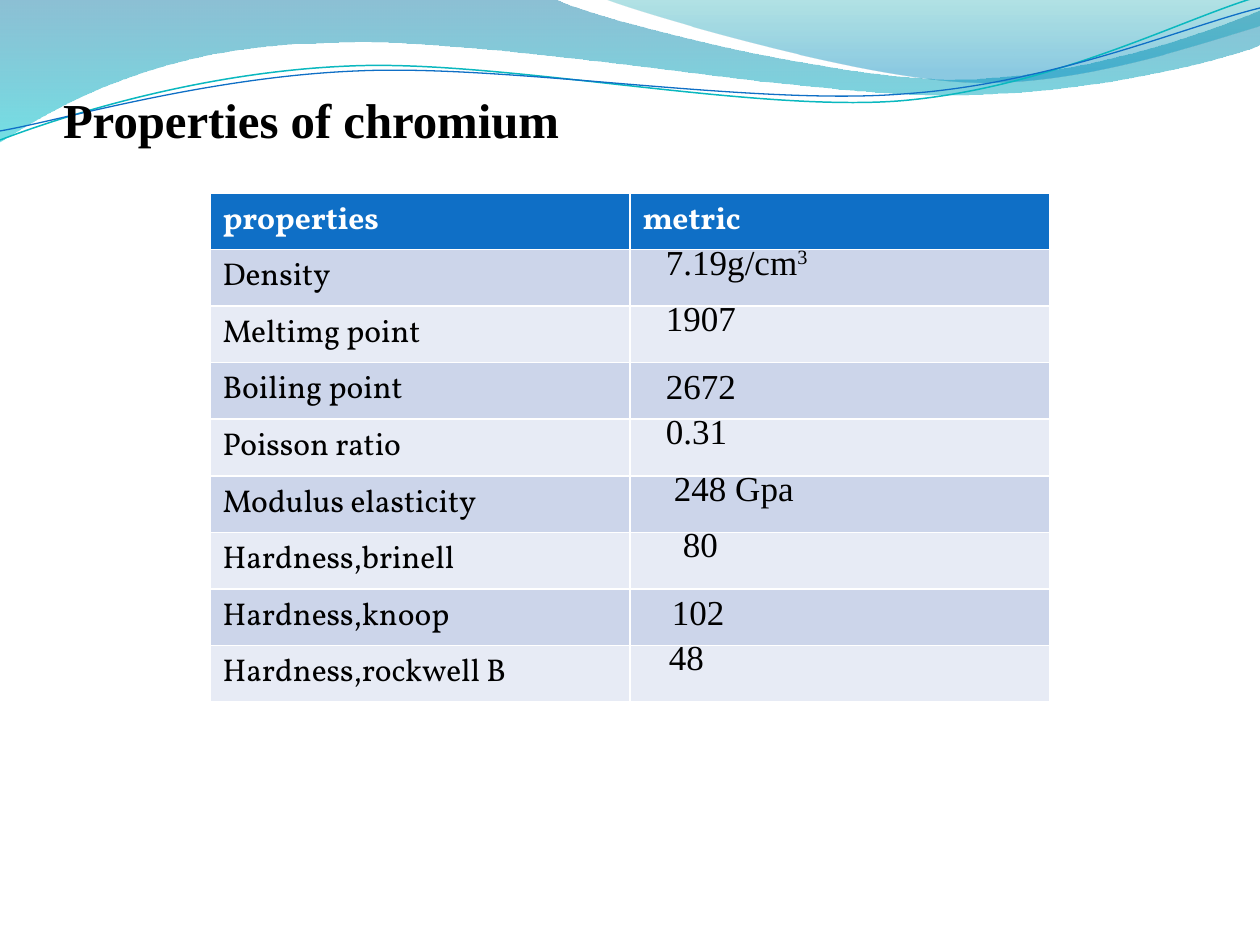
from lxml import etree
from pptx import Presentation
from pptx import util as u
from pptx.dml.color import RGBColor
from pptx.enum import text
from pptx.oxml.ns import qn

PX = 7257  # EMU in one px, 126 px to the inch
SERIF, BODY = "Times New Roman", "Vollkorn"


def rgb(color):
    return RGBColor.from_string(color)


def write(p, words, size=18, font=BODY, color="000000", bold=False, raised=False):
    r = p.add_run()
    r.text = words
    r.font.size, r.font.name, r.font.bold = u.Pt(size), font, bold
    r.font.color.rgb = rgb(color)
    if raised:
        r._r.get_or_add_rPr().set("baseline", "30000")


prs = Presentation()
prs.slide_width, prs.slide_height = u.Inches(10), u.Inches(7.5)
s = prs.slides.add_slide(prs.slide_layouts[5])

# Waves: two numbers are the end of a line, six are a Bezier curve
waves = [
    ([(-1, -1), (554, -1), (600, 21, 837, 79, 955, 79), (1074, 79, 1207, 33, 1260, 11),
      (1261, 45), (1239, 55, 1096, 96, 940, 95), (784, 94, 481, 35, 324, 43),
      (163, 45, 58, 105, -1, 142)],
     [(0, "0074A1", 45), (1, "00C6CF", 55)], None),
    ([(604, -1), (641, 14, 859, 78, 969, 82), (1079, 87, 1211, 40, 1260, 26), (1260, 0)],
     [(0, "00A1A9", 30), (0.8, "008BBF", 45)], None),
    ([(0, 140), (60, 117, 199, 72, 349, 66), (498, 59, 747, 112, 898, 101),
      (1049, 89, 1182, 19, 1257, -3)], None, ("0AB8BF", 0.85)),
    ([(0, 131), (59, 121, 207, 77, 357, 71), (508, 64, 752, 106, 903, 94),
      (1053, 84, 1186, 26, 1260, 8)], None, ("0F6FC6", 0.75)),
]
for segments, stops, line in waves:
    points = [seg[i:i + 2] for seg in segments for i in range(0, len(seg), 2)]
    fb = s.shapes.build_freeform(*points[0], scale=PX)
    fb.add_line_segments(points[1:], close=stops is not None)
    sp = fb.convert_to_shape()
    sp.shadow.inherit = False

    # Join each curve's three points into one Bezier command
    lines = iter(list(sp.element.iter(qn("a:lnTo"))))
    for seg in segments[1:]:
        first = next(lines)
        if len(seg) == 6:
            first.tag = qn("a:cubicBezTo")
            for _ in range(2):
                extra = next(lines)
                first.append(extra[0])
                extra.getparent().remove(extra)

    if stops:
        sp.line.fill.background()
        sp.fill.gradient()
        sp.fill.gradient_angle = 270
        for stop, (position, color, opacity) in zip(sp.fill.gradient_stops, stops):
            stop.position = position
            stop.color.rgb = rgb(color)
            clr = stop._gs.find(qn("a:srgbClr"))
            etree.SubElement(clr, qn("a:alpha")).set("val", str(opacity * 1000))
    else:
        sp.fill.background()
        sp.line.color.rgb, sp.line.width = rgb(line[0]), u.Pt(line[1])

# Title, in front of the waves
title = s.shapes.title
title.element.getparent().append(title.element)
title.left, title.top, title.width, title.height = 63 * PX, 55 * PX, 1144 * PX, 753 * PX
tf = title.text_frame
tf.word_wrap, tf.auto_size = True, text.MSO_AUTO_SIZE.NONE
tf.vertical_anchor = text.MSO_ANCHOR.TOP
tf.margin_left = tf.margin_right = tf.margin_bottom = 0
tf.margin_top = 35 * PX
tf.paragraphs[0].alignment = text.PP_ALIGN.LEFT
write(tf.paragraphs[0], "Properties of chromium", size=27.9, font=SERIF, bold=True)

# Table: property, value, left margin of the value, line spacing
TIGHT, LOOSE = u.Pt(18.9), 1.15
rows = [
    ("properties", "metric", None, None),
    ("Density", "7.19g/cm", 36, TIGHT),
    ("Meltimg point", "1907", 36, TIGHT),
    ("Boiling point", "2672", 36, LOOSE),
    ("Poisson ratio", "0.31", 36, TIGHT),
    ("Modulus elasticity", "248 Gpa", 44, TIGHT),
    ("Hardness,brinell", "80", 53, TIGHT),
    ("Hardness,knoop", "102", 42, LOOSE),
    ("Hardness,rockwell B", "48", 39, TIGHT),
]
# The default table style gives the white borders
table = s.shapes.add_table(len(rows), 2, 210 * PX, 193 * PX,
                           840 * PX, 52 * len(rows) * PX).table
for i, (name, value, margin, spacing) in enumerate(rows):
    for j, words in enumerate((name, value)):
        cell = table.cell(i, j)
        cell.fill.solid()
        cell.fill.fore_color.rgb = rgb("0F6FC6" if i == 0 else "CCD5EA" if i % 2 else "E7EBF5")
        p = cell.text_frame.paragraphs[0]
        if i == 0:
            write(p, words, color="FFFFFF", bold=True)
        elif j == 0:
            write(p, words)
        else:
            cell.margin_left, cell.margin_right = margin * PX, 9 * PX
            cell.margin_top = cell.margin_bottom = 0
            p.line_spacing = spacing
            write(p, words, size=20, font=SERIF)
            if name == "Density":
                write(p, "3", size=20, font=SERIF, raised=True)

prs.save("out.pptx")
